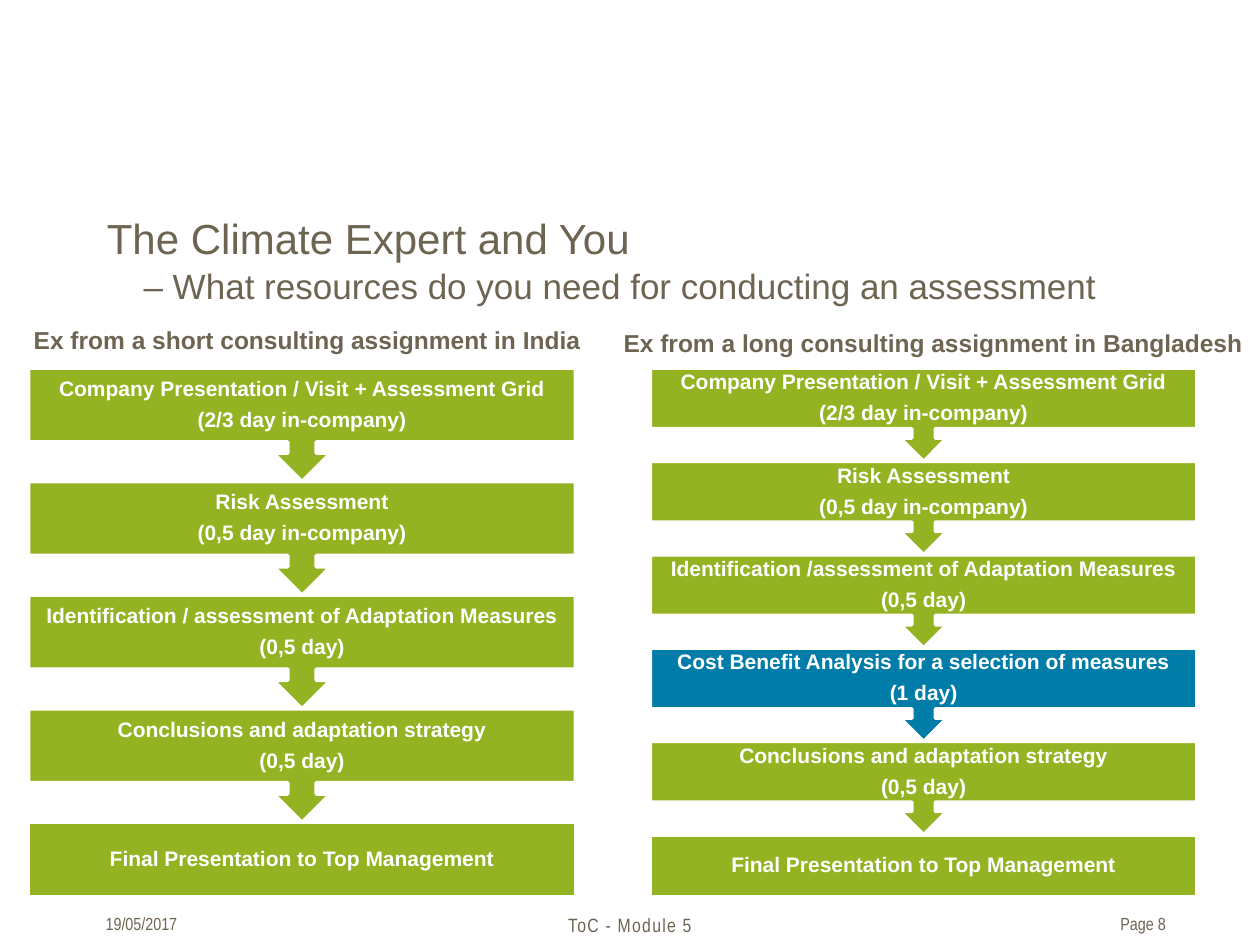
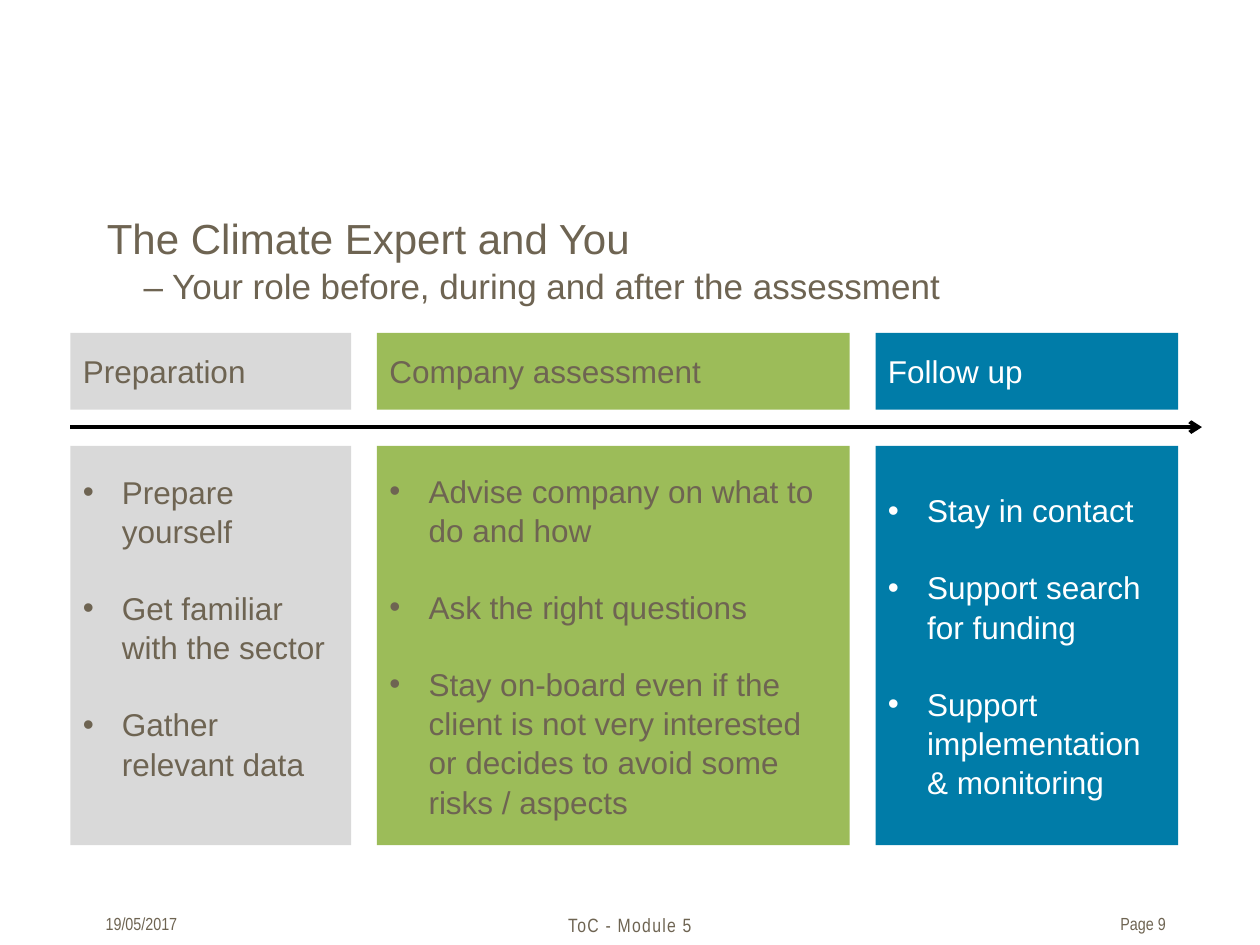
from copy import deepcopy

from lxml import etree
from pptx import Presentation
from pptx.dml.color import RGBColor
from pptx.enum.shapes import MSO_CONNECTOR, MSO_SHAPE
from pptx.enum.text import MSO_ANCHOR, MSO_AUTO_SIZE, PP_ALIGN
from pptx.oxml.ns import qn
from pptx.util import Cm, Pt

RECT = MSO_SHAPE.RECTANGLE
CALLOUT = MSO_SHAPE.DOWN_ARROW_CALLOUT
STRAIGHT = MSO_CONNECTOR.STRAIGHT
TOP, MIDDLE = MSO_ANCHOR.TOP, MSO_ANCHOR.MIDDLE
LEFT, CENTER, RIGHT = PP_ALIGN.LEFT, PP_ALIGN.CENTER, PP_ALIGN.RIGHT
NO_AUTOFIT = MSO_AUTO_SIZE.NONE

BROWN, WHITE, BLACK = "6E6452", "FFFFFF", "000000"
GREEN, BLUE = "94B322", "007CA8"
LIGHT_GREEN, GREY = "9CBC59", "D9D9D9"
LINE_SPACING = 1.04

TITLE = "The Climate Expert and You"
DATE = "19/05/2017"
FOOTER = "ToC - Module 5"

RESOURCES = "– What resources do you need for conducting an assessment"
ROLE = "– Your role before, during and after the assessment"

VISIT = "Company Presentation / Visit + Assessment Grid\n(2/3 day in-company)"
RISK = "Risk Assessment\n(0,5 day in-company)"
CONCLUSIONS = "Conclusions and adaptation strategy\n(0,5 day)"
FINAL = "Final Presentation to Top Management"

FLOWS = [
    {
        "heading": "Ex from a short consulting assignment in India",
        "heading_box": (0.43, 6.43, 11.66, 0.86),
        "left": 0.58,
        "box_height": 1.5,
        "steps": [
            (VISIT, GREEN),
            (RISK, GREEN),
            ("Identification / assessment of Adaptation Measures\n(0,5 day)", GREEN),
            (CONCLUSIONS, GREEN),
            (FINAL, GREEN),
        ],
    },
    {
        "heading": "Ex from a long consulting assignment in Bangladesh",
        "heading_box": (12.32, 6.48, 13.08, 0.86),
        "left": 13.11,
        "box_height": 1.25,
        "steps": [
            (VISIT, GREEN),
            (RISK, GREEN),
            ("Identification /assessment of Adaptation Measures\n(0,5 day)", GREEN),
            ("Cost Benefit Analysis for a selection of measures\n(1 day)", BLUE),
            (CONCLUSIONS, GREEN),
            (FINAL, GREEN),
        ],
    },
]
FLOW_TOP, FLOW_BOTTOM, FLOW_WIDTH = 7.42, 18.08, 11.02

PHASES = [
    ("Preparation", 5.66, GREY, BROWN, 0.88, [
        "Prepare yourself",
        "Get familiar with the sector",
        "Gather relevant data",
    ]),
    ("Company assessment", 9.53, LIGHT_GREEN, BROWN, 0.13, [
        "Advise company on what to do and how",
        "Ask the right questions",
        "Stay on-board even if the client is not very interested "
        "or decides to avoid some risks / aspects",
    ]),
    ("Follow up", 6.1, BLUE, WHITE, 0.13, [
        "Stay in contact",
        "Support search for funding",
        "Support implementation & monitoring",
    ]),
]
PHASE_LEFT, PHASE_GAP = 1.42, 0.52
HEADER_TOP, HEADER_HEIGHT = 6.71, 1.55
BODY_TOP, BODY_HEIGHT = 8.99, 8.05
ARROW_Y, ARROW_END = 8.61, 24.23


def rgb(color):
    return RGBColor.from_string(color)


def box(values):
    return [Cm(v) for v in values]


def format_run(r, size, color, bold=False, font="Arial"):
    r.font.name = font
    r.font.size = Pt(size)
    r.font.bold = bold
    r.font.color.rgb = rgb(color)


def format_text(tf, size, color, align=LEFT, bold=False, font="Arial"):
    tf.word_wrap = True
    for p in tf.paragraphs:
        p.alignment = align
        for r in p.runs:
            format_run(r, size, color, bold, font)


def set_indent(p, indent):
    pPr = p._p.get_or_add_pPr()
    pPr.set("marL", str(Cm(indent)))
    pPr.set("indent", str(-Cm(indent)))
    return pPr


def add_text(slide, area, text, size, **style):
    sp = slide.shapes.add_textbox(*box(area))
    tf = sp.text_frame
    tf.text = text
    format_text(tf, size, BROWN, **style)
    return tf


def add_block(slide, kind, area, fill, text, size, color, **style):
    sp = slide.shapes.add_shape(kind, *box(area))
    sp.shadow.inherit = False
    sp.fill.solid()
    sp.fill.fore_color.rgb = rgb(fill)
    sp.line.fill.background()
    tf = sp.text_frame
    tf.text = text
    tf.vertical_anchor = MIDDLE
    format_text(tf, size, color, **style)
    return sp


def add_slide(prs, subtitle, page):
    slide = prs.slides.add_slide(prs.slide_layouts[5])
    title = slide.shapes.title
    title.left, title.top, title.width, title.height = box((1.9, 4.11, 21.6, 2.69))
    tf = title.text_frame
    tf.text = f"{TITLE}\v{subtitle}"
    tf.auto_size = NO_AUTOFIT
    tf.vertical_anchor = TOP
    format_text(tf, 24, BROWN)
    p = tf.paragraphs[0]
    p.line_spacing = LINE_SPACING
    set_indent(p, 0.74)
    p._p.find(qn("a:br")).append(deepcopy(p.runs[0]._r.rPr))
    p.runs[1].font.size = Pt(20)

    narrow = "Arial Narrow"
    add_text(slide, (1.88, 18.29, 3.61, 0.69), DATE, 10, font=narrow)
    tf = add_text(slide, (7.95, 18.29, 9.5, 0.71), FOOTER, 11, align=CENTER, font=narrow)
    tf.paragraphs[0].runs[0]._r.get_or_add_rPr().set("spc", "70")
    tf = add_text(slide, (20.93, 18.29, 2.57, 0.69), f"Page {page}", 10,
                  align=RIGHT, font=narrow)
    tf.margin_right = 0
    return slide


def add_flow(slide, flow):
    add_text(slide, flow["heading_box"], flow["heading"], 14, bold=True)
    steps, height = flow["steps"], flow["box_height"]
    last = len(steps) - 1
    pitch = (FLOW_BOTTOM - FLOW_TOP - height) / last
    for i, (text, fill) in reversed(list(enumerate(steps))):
        kind, step_height = (RECT, height) if i == last else (CALLOUT, pitch)
        area = (flow["left"], FLOW_TOP + i * pitch, FLOW_WIDTH, step_height)
        sp = add_block(slide, kind, area, fill, text, 12, WHITE, align=CENTER, bold=True)
        sp.line.color.rgb = rgb(WHITE)
        sp.line.width = Pt(2)
        if kind == CALLOUT:
            sp.adjustments[3] = 0.65
        tf = sp.text_frame
        tf.margin_left = tf.margin_right = tf.margin_top = tf.margin_bottom = Cm(0.23)
        for p in tf.paragraphs:
            p.line_spacing = 0.9
            p.space_after = Pt(4.8)


def add_bullets(tf):
    for i, p in enumerate(tf.paragraphs):
        pPr = set_indent(p, 0.79)
        bullet_font = etree.SubElement(pPr, qn("a:buFont"))
        bullet_font.set("typeface", "Arial")
        etree.SubElement(pPr, qn("a:buChar")).set("char", "•")
        p.line_spacing = LINE_SPACING
        p.space_before = Pt(21.5 if i else 0)


def add_arrow(slide):
    line = slide.shapes.add_connector(
        STRAIGHT, *box((PHASE_LEFT, ARROW_Y, ARROW_END, ARROW_Y)))
    line.line.color.rgb = rgb(BLACK)
    line.line.width = Pt(2.25)
    etree.SubElement(line.line._get_or_add_ln(), qn("a:tailEnd")).set("type", "arrow")
    etree.SubElement(line._element.spPr, qn("a:effectLst"))


def add_phases(slide):
    left = PHASE_LEFT
    for name, width, fill, color, margin_bottom, tasks in PHASES:
        add_block(slide, RECT, (left, HEADER_TOP, width, HEADER_HEIGHT),
                  fill, name, 18, color)
        sp = add_block(slide, RECT, (left, BODY_TOP, width, BODY_HEIGHT),
                       fill, "\n".join(tasks), 18, color)
        sp.text_frame.margin_bottom = Cm(margin_bottom)
        add_bullets(sp.text_frame)
        left += width + PHASE_GAP


def main():
    prs = Presentation()
    prs.slide_width, prs.slide_height = Cm(25.4), Cm(19.05)

    slide = add_slide(prs, RESOURCES, 8)
    for flow in FLOWS:
        add_flow(slide, flow)

    slide = add_slide(prs, ROLE, 9)
    add_arrow(slide)
    add_phases(slide)

    prs.save("out.pptx")


if __name__ == "__main__":
    main()
